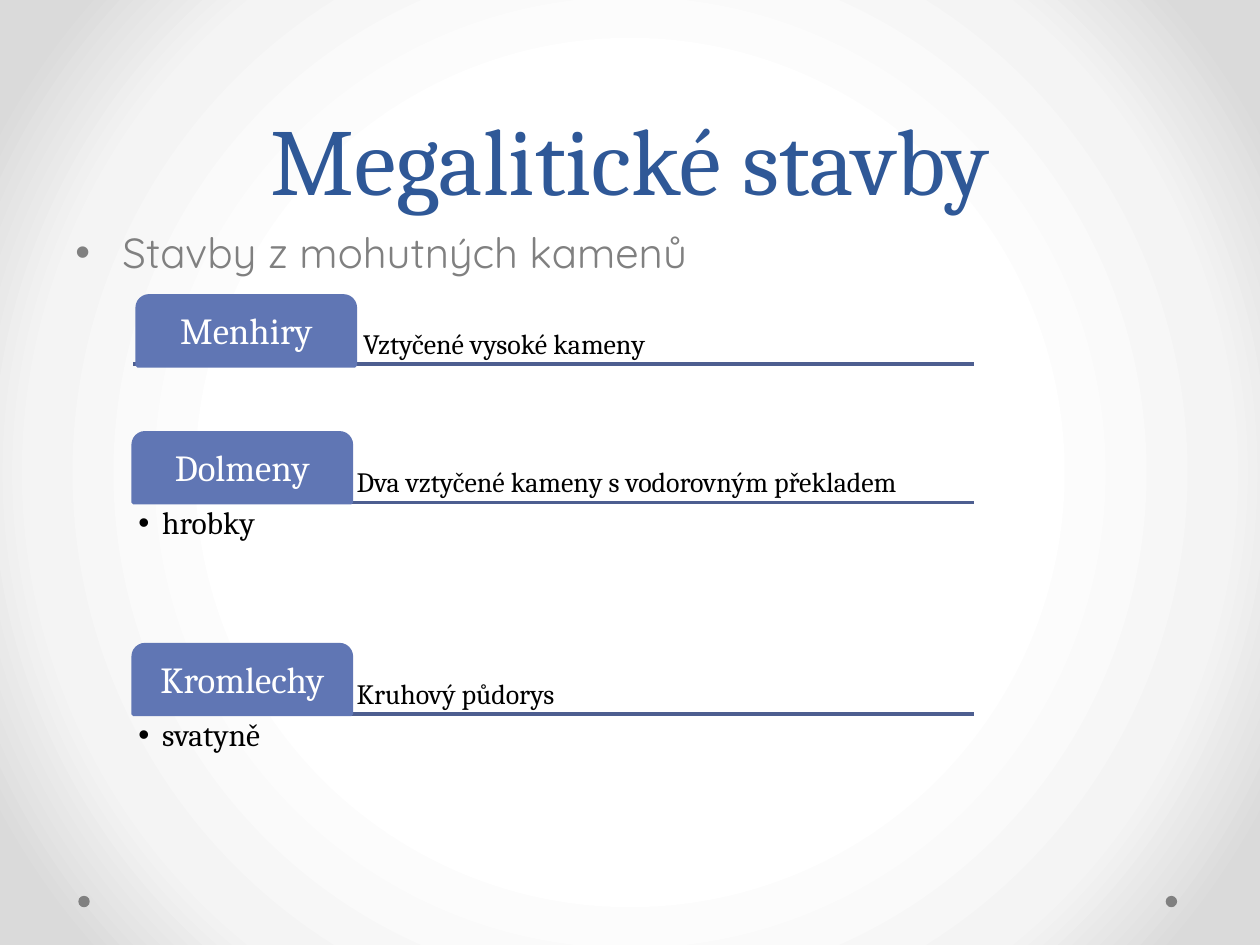
from lxml import etree
from pptx import Presentation
from pptx.dml.color import RGBColor
from pptx.enum.shapes import MSO_CONNECTOR, MSO_SHAPE
from pptx.enum.text import MSO_ANCHOR as Anchor, PP_ALIGN as Align
from pptx.oxml import parse_xml
from pptx.oxml.ns import nsdecls, qn
from pptx.util import Cm, Pt

TITLE = "Megalitické stavby"
INTRO = "Stavby z mohutných kamenů"
MONUMENTS = [
    {"name": "Menhiry", "caption": "Vztyčené vysoké kameny", "rule": 7.34,
     "tab_shift": (0.08, 0.03), "caption_shift": 0.13},
    {"name": "Dolmeny", "caption": "Dva vztyčené kameny s vodorovným překladem",
     "rule": 10.13, "use": "hrobky"},
    {"name": "Kromlechy", "caption": "Kruhový půdorys", "rule": 14.4, "use": "svatyně"},
]
BACKDROP = [(50, "FFFFFF"), (76, "F4F4F4"), (92, "DADADA")]
SERIF, SANS = "Cambria", "Quicksand"
BLUE, TAB, RULE, GREY, BLACK, WHITE = "2F5897", "6076B4", "4D5E90", "808080", "000000", "FFFFFF"
WIDTH, HEIGHT, MARGIN = 25.4, 19.05, 1.27
LEFT, RIGHT, CAPTION_LEFT = 2.69, 19.63, 7.11
TAB_WIDTH, TAB_HEIGHT, USE_HEIGHT = 4.39, 1.4, 2.82
DOT, DOT_TOP = 0.23, 18.06
DOT_LEFTS = [1.58, 23.5]


def color(code):
    return RGBColor.from_string(code)


def write(shape, text, size, font, ink, align=Align.LEFT, anchor=Anchor.TOP,
          inset=None, spacing=None, indent=None):
    frame = shape.text_frame
    frame.word_wrap = True
    frame.vertical_anchor = anchor
    if inset is not None:
        frame.margin_left = frame.margin_right = Cm(inset)
        frame.margin_top = frame.margin_bottom = Cm(inset)
    paragraph = frame.paragraphs[0]
    paragraph.alignment = align
    paragraph.line_spacing = spacing
    if indent:
        properties = paragraph._p.get_or_add_pPr()
        properties.set("marL", str(Cm(indent)))
        properties.set("indent", str(-Cm(indent)))
        bullet_font = etree.SubElement(properties, qn("a:buFont"))
        bullet_font.set("typeface", "Arial")
        etree.SubElement(properties, qn("a:buChar")).set("char", "•")
    run = paragraph.add_run()
    run.text = text
    run.font.size = Pt(size)
    run.font.name = font
    run.font.color.rgb = color(ink)


def add_text(slide, left, top, width, height, *args, **options):
    box = slide.shapes.add_textbox(Cm(left), Cm(top), Cm(width), Cm(height))
    write(box, *args, **options)


def add_filled(slide, kind, left, top, width, height, fill):
    shape = slide.shapes.add_shape(kind, Cm(left), Cm(top), Cm(width), Cm(height))
    shape.shadow.inherit = False
    shape.fill.solid()
    shape.fill.fore_color.rgb = color(fill)
    shape.line.fill.background()
    return shape


def paint_background(slide):
    slide.background.fill.solid()
    solid = slide.background._cSld.bg.bgPr.find(qn("a:solidFill"))
    stops = "".join(f'<a:gs pos="{pos * 1000}"><a:srgbClr val="{code}"/></a:gs>'
                    for pos, code in BACKDROP)
    gradient = parse_xml(
        f'<a:gradFill {nsdecls("a")} rotWithShape="1"><a:gsLst>{stops}</a:gsLst>'
        '<a:path path="circle"><a:fillToRect l="50000" t="50000" r="50000" b="50000"/>'
        '</a:path></a:gradFill>')
    solid.getparent().replace(solid, gradient)


def add_monument(slide, name, caption, rule, use=None, tab_shift=(0, 0), caption_shift=0):
    line = slide.shapes.add_connector(
        MSO_CONNECTOR.STRAIGHT, Cm(LEFT), Cm(rule), Cm(RIGHT), Cm(rule))
    line.line.color.rgb = color(RULE)
    line.line.width = Pt(2.25)
    etree.SubElement(line._element.spPr, qn("a:effectLst"))

    top = rule - TAB_HEIGHT
    add_text(slide, CAPTION_LEFT + caption_shift, top, RIGHT - CAPTION_LEFT, TAB_HEIGHT,
             caption, 16, SERIF, BLACK, anchor=Anchor.BOTTOM, inset=0.08, spacing=0.9)

    across, down = tab_shift
    tab = add_filled(slide, MSO_SHAPE.ROUND_2_SAME_RECTANGLE,
                     LEFT + across, top + down, TAB_WIDTH, TAB_HEIGHT, TAB)
    tab.adjustments[0] = 0.167
    tab.adjustments[1] = 0
    tab.line.color.rgb = color(TAB)
    tab.line.width = Pt(2.25)
    write(tab, name, 21, SERIF, WHITE, align=Align.CENTER, anchor=Anchor.MIDDLE,
          inset=0.1, spacing=0.9)

    if use:
        add_text(slide, LEFT, rule, RIGHT - LEFT, USE_HEIGHT, use, 18, SERIF, BLACK,
                 inset=0.1, spacing=0.9, indent=0.48)


def main():
    deck = Presentation()
    deck.slide_width, deck.slide_height = Cm(WIDTH), Cm(HEIGHT)
    slide = deck.slides.add_slide(deck.slide_layouts[6])
    paint_background(slide)
    for left in DOT_LEFTS:
        add_filled(slide, MSO_SHAPE.OVAL, left, DOT_TOP, DOT, DOT, GREY)
    content_width = WIDTH - 2 * MARGIN
    add_text(slide, MARGIN, 0, content_width, 4.45, TITLE, 54, SERIF, BLUE,
             align=Align.CENTER, anchor=Anchor.BOTTOM, spacing=Pt(58))
    add_text(slide, MARGIN, 4.45, content_width, 12.57, INTRO, 24, SANS, GREY, indent=0.95)
    for monument in MONUMENTS:
        add_monument(slide, **monument)
    deck.save("out.pptx")


if __name__ == "__main__":
    main()
